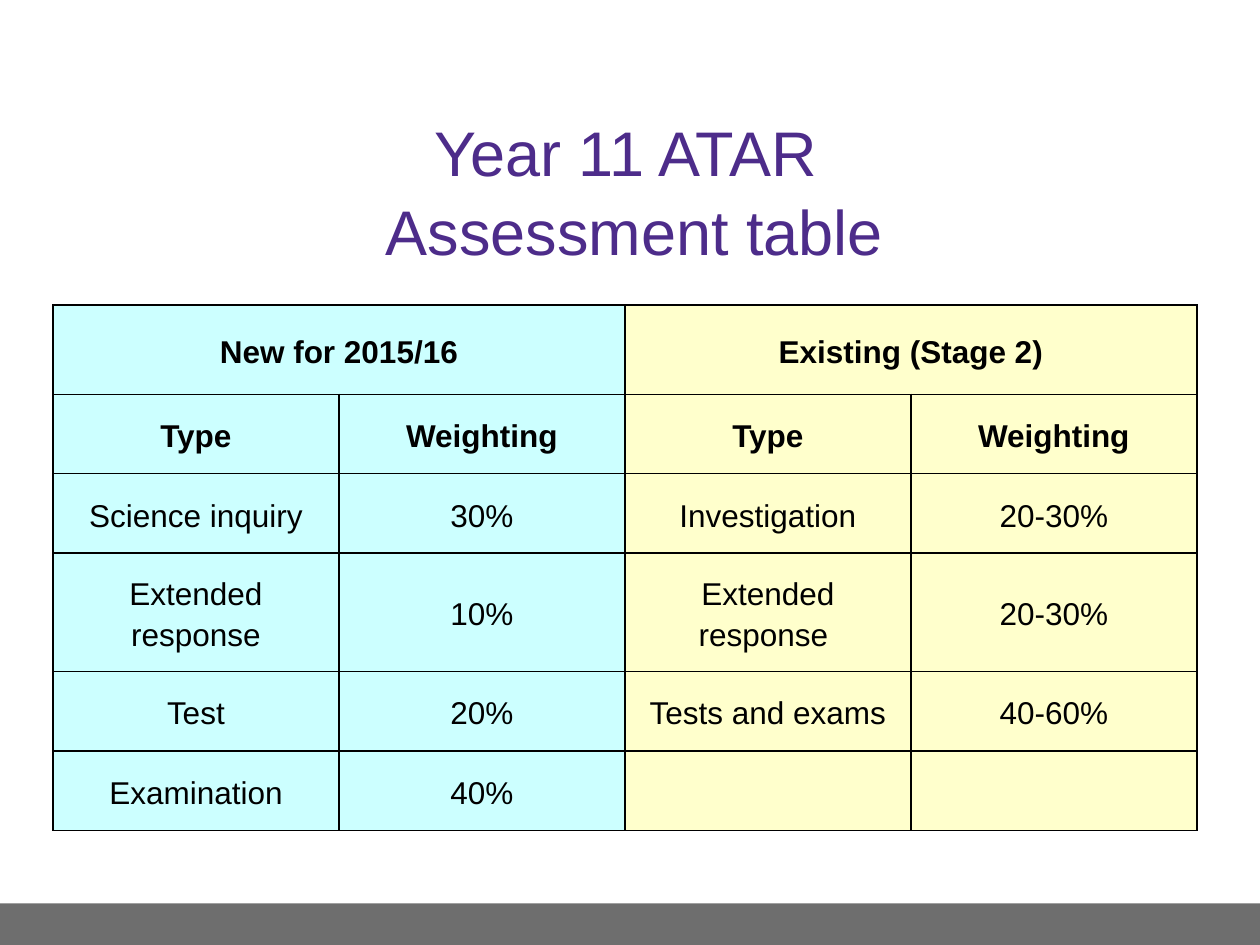
from lxml.etree import SubElement
from pptx import Presentation
from pptx.dml.color import RGBColor
from pptx.enum.shapes import MSO_SHAPE
from pptx.enum.text import MSO_ANCHOR, PP_ALIGN
from pptx.oxml.ns import qn
from pptx.util import Inches, Pt

FONT = "Arial"
BLACK, PURPLE, GREY = "000000", "4D2C8A", "6E6E6E"
NEW_FILL, EXISTING_FILL = "CCFFFF", "FFFFCC"
ROW_HEIGHTS = [0.71, 0.63, 0.63, 0.94, 0.63, 0.63]
ROWS = [
    ["New for 2015/16", "", "Existing (Stage 2)", ""],
    ["Type", "Weighting", "Type", "Weighting"],
    ["Science inquiry", "30%", "Investigation", "20-30%"],
    ["Extended response", "10%", "Extended response ", "20-30%"],
    ["Test", "20%", "Tests and exams", "40-60%"],
    ["Examination", "40%", "", ""],
]
HEADER_ROWS = 2


def color(value):
    """Turn a hex string into a colour."""
    return RGBColor.from_string(value)


def add_run(paragraph, text, size, font_color, bold=False):
    """Add one formatted run to a paragraph."""
    run = paragraph.add_run()
    run.text = text
    run.font.name = FONT
    run.font.size = Pt(size)
    run.font.bold = bold
    run.font.color.rgb = color(font_color)


def add_footer_bar(slide, left, top, width, height):
    """Draw the plain bar along the foot of the slide."""
    bar = slide.shapes.add_shape(
        MSO_SHAPE.RECTANGLE, Inches(left), Inches(top), Inches(width), Inches(height))
    bar.shadow.inherit = False
    bar.fill.solid()
    bar.fill.fore_color.rgb = color(GREY)
    bar.line.fill.background()


def add_title(slide, left, top, width, height):
    """Write the two-line title in the middle of its box."""
    box = slide.shapes.add_textbox(
        Inches(left), Inches(top), Inches(width), Inches(height))
    frame = box.text_frame
    frame.word_wrap = True
    frame.vertical_anchor = MSO_ANCHOR.MIDDLE
    paragraph = frame.paragraphs[0]
    paragraph.alignment = PP_ALIGN.CENTER
    paragraph.line_spacing = 1.05
    add_run(paragraph, "Year 11 ATAR ", 36, PURPLE)
    paragraph.add_line_break()
    add_run(paragraph, "Assessment table", 36, PURPLE)


def add_borders(cell, line_color, width):
    """Put a solid line on all four sides of a cell."""
    properties = cell._tc.get_or_add_tcPr()
    for position, side in enumerate(("a:lnL", "a:lnR", "a:lnT", "a:lnB")):
        line = properties.makeelement(qn(side), {"w": str(Pt(width))})
        fill = SubElement(line, qn("a:solidFill"))
        SubElement(fill, qn("a:srgbClr"), val=line_color)
        properties.insert(position, line)


def style_cell(cell, text, fill, bold):
    """Fill, border and write one table cell."""
    cell.fill.solid()
    cell.fill.fore_color.rgb = color(fill)
    add_borders(cell, BLACK, 1)
    cell.vertical_anchor = MSO_ANCHOR.MIDDLE
    cell.margin_left = cell.margin_right = Inches(0.07)
    cell.margin_top = cell.margin_bottom = 0
    paragraph = cell.text_frame.paragraphs[0]
    paragraph.alignment = PP_ALIGN.CENTER
    paragraph.line_spacing = 1.15
    if text:
        add_run(paragraph, text, 18, BLACK, bold)


def add_assessment_table(slide, left, top, width, height):
    """Build the table that sets new weightings beside existing ones."""
    column_count = len(ROWS[0])
    table = slide.shapes.add_table(
        len(ROWS), column_count,
        Inches(left), Inches(top), Inches(width), Inches(height)).table
    table.first_row = table.horz_banding = False
    for column in table.columns:
        column.width = Inches(width / column_count)
    for row, row_height in zip(table.rows, ROW_HEIGHTS):
        row.height = Inches(row_height)
    half = column_count // 2
    for start in (0, half):
        table.cell(0, start).merge(table.cell(0, start + half - 1))
    for row_index, texts in enumerate(ROWS):
        for column_index, text in enumerate(texts):
            fill = NEW_FILL if column_index < half else EXISTING_FILL
            style_cell(table.cell(row_index, column_index), text, fill,
                       row_index < HEADER_ROWS)


def main():
    """Build and save the presentation."""
    presentation = Presentation()
    presentation.slide_width = Inches(10)
    presentation.slide_height = Inches(7.5)
    slide = presentation.slides.add_slide(presentation.slide_layouts[6])
    add_footer_bar(slide, 0, 7.17, 10, 0.33)
    add_title(slide, 0.36, 0.92, 9.35, 1.16)
    add_assessment_table(slide, 0.42, 2.42, 9.08, 4.17)
    presentation.save("out.pptx")


if __name__ == "__main__":
    main()
